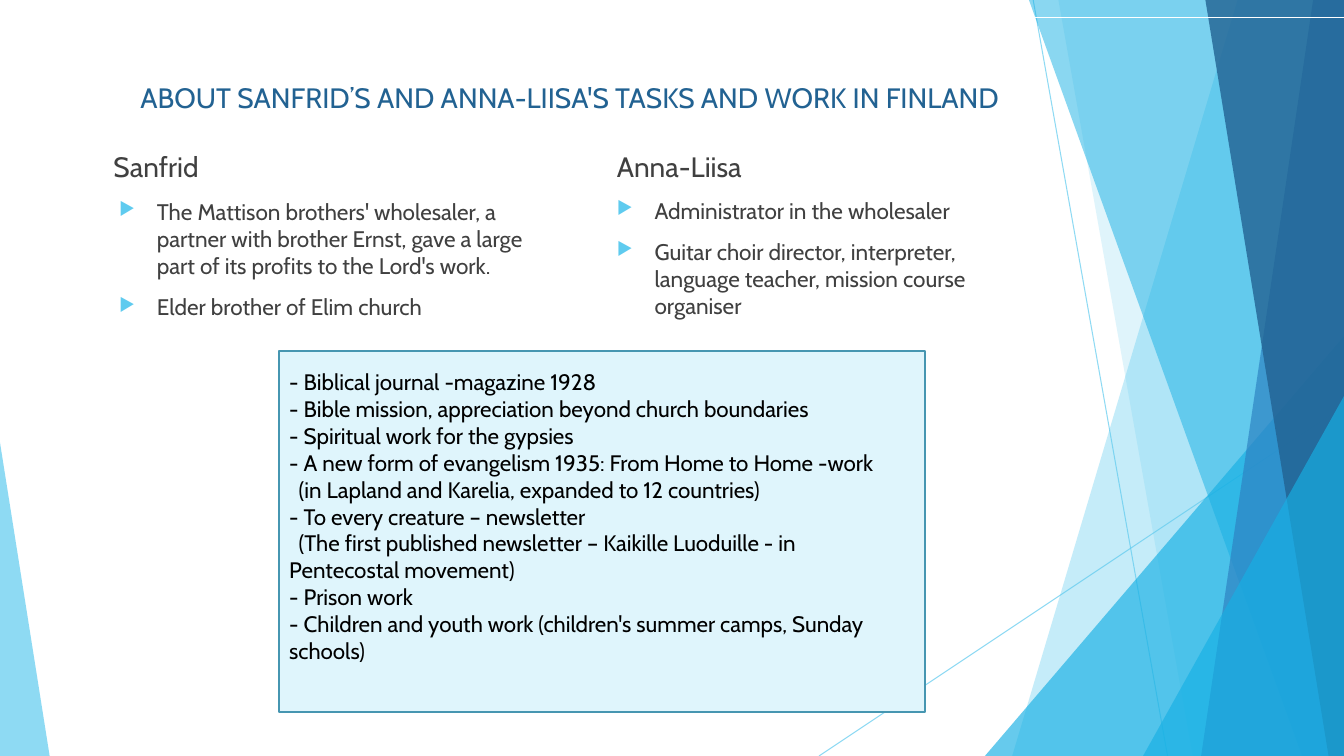
import pptx
import pptx.util
import pptx.dml.color
import pptx.enum.shapes
import pptx.enum.text
import pptx.oxml
import pptx.oxml.ns

Pt = pptx.util.Pt
Shape = pptx.enum.shapes.MSO_SHAPE
Anchor = pptx.enum.text.MSO_ANCHOR
Align = pptx.enum.text.PP_ALIGN

WIDTH, HEIGHT = 960, 540
SKY, CYAN, BLUE, NAVY = "5FCBEF", "17B0E4", "2E83C3", "226292"
GREY, BLACK, WHITE = "404040", "000000", "FFFFFF"


def colour(code):
    return pptx.dml.color.RGBColor.from_string(code)


def add_xml(parent, tag, **values):
    child = pptx.oxml.parse_xml(f"<a:{tag} {pptx.oxml.ns.nsdecls('a')}/>")
    for name, value in values.items():
        child.set(name, str(value))
    parent.append(child)
    return child


def assign(target, values):
    for name, value in values.items():
        setattr(target, name, value)


class PageBuilder:
    """Holds the text style and current slide, and adds elements in points."""

    def __init__(self, page, font):
        self.page = page
        self.font = font

    def fade(self, shape, alpha):
        for tint in shape.element.spPr.iter(pptx.oxml.ns.qn("a:srgbClr")):
            add_xml(tint, "alpha", val=alpha * 1000)

    def paint(self, shape, fill, alpha=100):
        shape.shadow.inherit = False
        shape.fill.solid()
        shape.fill.fore_color.rgb = colour(fill)
        if alpha < 100:
            self.fade(shape, alpha)
        shape.line.fill.background()

    def line(self, start, end, stroke, width, alpha=100):
        kind = pptx.enum.shapes.MSO_CONNECTOR.STRAIGHT
        line = self.page.shapes.add_connector(kind, *map(Pt, start + end))
        line.line.color.rgb = colour(stroke)
        line.line.width = Pt(width)
        if alpha < 100:
            self.fade(line, alpha)
        add_xml(line.element.spPr, "effectLst")

    def band(self, top_x, bottom_x, fill, alpha):
        corners = [(WIDTH, 0), (WIDTH, HEIGHT), (bottom_x, HEIGHT)]
        outline = self.page.shapes.build_freeform(Pt(top_x), 0)
        outline.add_line_segments([(Pt(x), Pt(y)) for x, y in corners])
        self.paint(outline.convert_to_shape(), fill, alpha)

    def triangle(self, place, apex, fill, alpha):
        shape = self.page.shapes.add_shape(Shape.ISOSCELES_TRIANGLE, *map(Pt, place))
        shape.adjustments[0] = apex
        self.paint(shape, fill, alpha)

    def fill_text(self, shape, lines, size, ink, before=0, bullet=False, anchor=Anchor.TOP, inset=3.6):
        frame = shape.text_frame
        assign(frame, {
            "word_wrap": True, "auto_size": pptx.enum.text.MSO_AUTO_SIZE.NONE,
            "vertical_anchor": anchor, "margin_left": Pt(7.2), "margin_right": Pt(7.2),
            "margin_top": Pt(inset), "margin_bottom": Pt(3.6),
        })
        frame.text = "\n".join(lines)
        for para in frame.paragraphs:
            assign(para, {"alignment": Align.LEFT, "space_before": Pt(before)})
            for span in para.runs:
                assign(span.font, {"name": self.font, "size": Pt(size)})
                span.font.color.rgb = colour(ink)
            properties = para._p.get_or_add_pPr()
            if bullet:
                properties.set("marL", str(Pt(27)))
                properties.set("indent", str(-Pt(27)))
                add_xml(add_xml(properties, "buClr"), "srgbClr", val=SKY)
                add_xml(properties, "buSzPct", val=80000)
                add_xml(properties, "buChar", char="▶")
            elif para.text.startswith("("):
                properties.set("indent", str(Pt(6.75)))

    def title(self, place, text):
        shape = self.page.shapes.title
        assign(shape, dict(zip(("left", "top", "width", "height"), map(Pt, place))))
        self.fill_text(shape, [text], 20, NAVY, inset=27.7)

    def text(self, place, lines, size, **style):
        shape = self.page.shapes.add_textbox(*map(Pt, place))
        self.fill_text(shape, lines, size, GREY, before=10, **style)

    def panel(self, place, lines, fill, stroke):
        shape = self.page.shapes.add_shape(Shape.RECTANGLE, *map(Pt, place))
        self.paint(shape, fill)
        shape.line.color.rgb = colour(stroke)
        shape.line.width = Pt(1.5)
        self.fill_text(shape, lines, 16, BLACK, inset=12.6)


def main():
    deck = pptx.Presentation()
    assign(deck, {"slide_width": Pt(WIDTH), "slide_height": Pt(HEIGHT)})
    page = deck.slides.add_slide(deck.slide_layouts.get_by_name("Title Only"))
    builder = PageBuilder(page, "Cabin")

    builder.line((738, 0), (834, HEIGHT), SKY, 0.75, 70)
    builder.line((WIDTH, 290), (585, HEIGHT), SKY, 0.75, 70)
    builder.band(884, 723, SKY, 36)
    builder.band(756, 852, SKY, 20)
    builder.triangle((703.5, 240, 256.5, 300), 1, CYAN, 66)
    builder.band(735, 930, CYAN, 50)
    builder.band(938, 858, BLUE, 70)
    builder.band(861, 949, NAVY, 80)
    builder.triangle((816.5, 283, 143.5, 257), 1, CYAN, 66)
    builder.triangle((0, 316, 35.5, 224), 0, SKY, 70)

    builder.title((93, 30, 637, 75), "ABOUT SANFRID’S AND ANNA-LIISA'S TASKS AND WORK IN FINLAND")
    columns = [
        ("Sanfrid", (74, 89, 330, 45.5), (78, 138, 304.5, 101.5), [
            "The Mattison brothers' wholesaler, a partner with brother Ernst, "
            "gave a large part of its profits to the Lord's work.",
            "Elder brother of Elim church",
        ]),
        ("Anna-Liisa", (433.5, 80, 330, 54.5), (433.5, 137, 287.5, 81.5), [
            "Administrator in the wholesaler",
            "Guitar choir director, interpreter, language teacher, mission course organiser",
        ]),
    ]
    for name, heading_place, list_place, tasks in columns:
        builder.text(heading_place, [name], 20, anchor=Anchor.BOTTOM)
        builder.text(list_place, tasks, 16.1, bullet=True)

    builder.panel((199.5, 250.5, 461, 258), [
        "- Biblical journal -magazine 1928",
        "- Bible mission, appreciation beyond church boundaries",
        "- Spiritual work for the gypsies",
        "- A new form of evangelism 1935: From Home to Home -work",
        "(in Lapland and Karelia, expanded to 12 countries)",
        "- To every creature – newsletter",
        "(The first published newsletter – Kaikille Luoduille - in\vPentecostal movement)",
        "- Prison work",
        "- Children and youth work (children's summer camps, Sunday schools)",
    ], "DFF5FC", "4696B1")
    builder.line((12, 12), (WIDTH, 12), WHITE, 0.25)

    deck.save("out.pptx")


if __name__ == "__main__":
    main()
